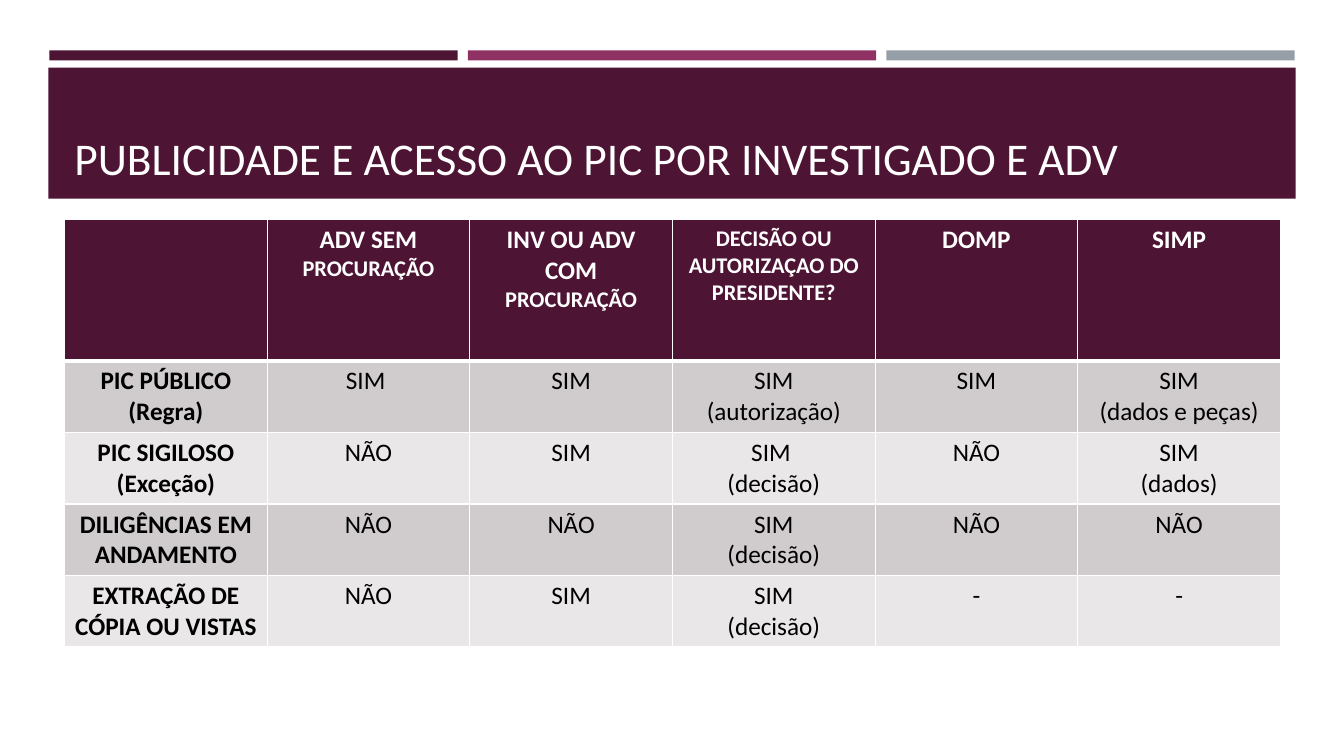
from dataclasses import dataclass

from lxml import etree
from pptx import Presentation
from pptx.dml.color import RGBColor
from pptx.enum.shapes import MSO_SHAPE
from pptx.enum.text import MSO_ANCHOR, PP_ALIGN
from pptx.oxml.ns import qn
from pptx.util import Inches, Pt

RECTANGLE = MSO_SHAPE.RECTANGLE
BOTTOM = MSO_ANCHOR.BOTTOM
CENTER = PP_ALIGN.CENTER


@dataclass(frozen=True)
class Theme:
    font: str = "Calibri"
    plum: str = "4D1434"
    magenta: str = "903163"
    gray: str = "969FA7"
    white: str = "FFFFFF"
    black: str = "000000"
    bands: tuple = ("D0CCCE", "E9E7E8")
    title_size: float = 32.4
    text_size: int = 18
    small_size: int = 16


THEME = Theme()
TITLE = "PUBLICIDADE E ACESSO AO PIC POR INVESTIGADO E ADV"
NORMAL, SMALL = THEME.text_size, THEME.small_size

# Each heading is a list of (text, size) spans.
HEADINGS = [
    [],
    [("ADV SEM ", NORMAL), ("PROCURAÇÃO", SMALL)],
    [("INV OU ADV COM ", NORMAL), ("PROCURAÇÃO", SMALL)],
    [("DECISÃO OU AUTORIZAÇAO DO PRESIDENTE?", SMALL)],
    [("DOMP", NORMAL)],
    [("SIMP", NORMAL)],
]
ACCESS_RULES = [
    ["PIC PÚBLICO\n(Regra)", "SIM ", "SIM", "SIM\n(autorização)", "SIM", "SIM\n(dados e peças)"],
    ["PIC SIGILOSO\n(Exceção)", "NÃO", "SIM", "SIM \n(decisão)", "NÃO", "SIM\n(dados)"],
    ["DILIGÊNCIAS EM ANDAMENTO", "NÃO", "NÃO", "SIM\n(decisão)", "NÃO", "NÃO"],
    ["EXTRAÇÃO DE CÓPIA OU VISTAS", "NÃO", "SIM", "SIM\n(decisão)", "-", "-"],
]


def add_bar(page, left, top, width, height, color):
    bar = page.shapes.add_shape(
        RECTANGLE, Inches(left), Inches(top), Inches(width), Inches(height))
    bar.shadow.inherit = False
    bar.fill.solid()
    bar.fill.fore_color.rgb = RGBColor.from_string(color)
    bar.line.fill.background()


def add_span(para, text, size, color, bold=False):
    span = para.add_run()
    span.text = text
    formats = {"name": THEME.font, "size": Pt(size), "bold": bold}
    for name, value in formats.items():
        setattr(span.font, name, value)
    span.font.color.rgb = RGBColor.from_string(color)


def add_title(page):
    box = page.shapes.add_textbox(Inches(0.64), Inches(0.77), Inches(12.06), Inches(1.11))
    frame = box.text_frame
    frame.word_wrap = True
    frame.vertical_anchor = BOTTOM
    add_span(frame.paragraphs[0], TITLE, THEME.title_size, THEME.white)


def style_cell(cell, color, bottom_width=1):
    """Give the cell white borders and a solid fill."""
    properties = cell._tc.get_or_add_tcPr()
    widths = {"a:lnL": 1, "a:lnR": 1, "a:lnT": 1, "a:lnB": bottom_width}
    for tag, width in widths.items():
        line = etree.SubElement(properties, qn(tag), w=str(Pt(width)))
        fill = etree.SubElement(line, qn("a:solidFill"))
        etree.SubElement(fill, qn("a:srgbClr"), val=THEME.white)
    cell.fill.solid()
    cell.fill.fore_color.rgb = RGBColor.from_string(color)


def write_cell(cell, paragraphs, color, bold):
    """Write centred paragraphs, each a list of (text, size) spans."""
    frame = cell.text_frame
    for index, spans in enumerate(paragraphs):
        para = frame.add_paragraph() if index else frame.paragraphs[0]
        para.alignment = CENTER
        for text, size in spans:
            add_span(para, text, size, color, bold)


def add_access_table(page):
    header_height, row_height, column_width = 1.4, 0.71, 2.01
    columns = len(HEADINGS)
    table = page.shapes.add_table(
        len(ACCESS_RULES) + 1, columns, Inches(0.64), Inches(2.18),
        Inches(column_width * columns),
        Inches(header_height + row_height * len(ACCESS_RULES))).table
    for column in table.columns:
        column.width = Inches(column_width)
    for index, row in enumerate(table.rows):
        row.height = Inches(row_height if index else header_height)

    for column, spans in enumerate(HEADINGS):
        cell = table.cell(0, column)
        style_cell(cell, THEME.plum, bottom_width=3)
        write_cell(cell, [spans], THEME.white, bold=True)
    for row, texts in enumerate(ACCESS_RULES):
        for column, text in enumerate(texts):
            cell = table.cell(row + 1, column)
            style_cell(cell, THEME.bands[row % 2], bottom_width=1)
            paragraphs = [[(line, NORMAL)] for line in text.split("\n")]
            write_cell(cell, paragraphs, THEME.black, bold=column == 0)


def main():
    deck = Presentation()
    deck.slide_width, deck.slide_height = Inches(13.33), Inches(7.5)
    page = deck.slides.add_slide(deck.slide_layouts[6])
    for index, color in enumerate((THEME.plum, THEME.magenta, THEME.gray)):
        add_bar(page, 0.49 + 4.15 * index, 0.5, 4.05, 0.1, color)
    add_bar(page, 0.48, 0.67, 12.37, 1.3, THEME.plum)
    add_title(page)
    add_access_table(page)
    deck.save("out.pptx")


if __name__ == "__main__":
    main()
